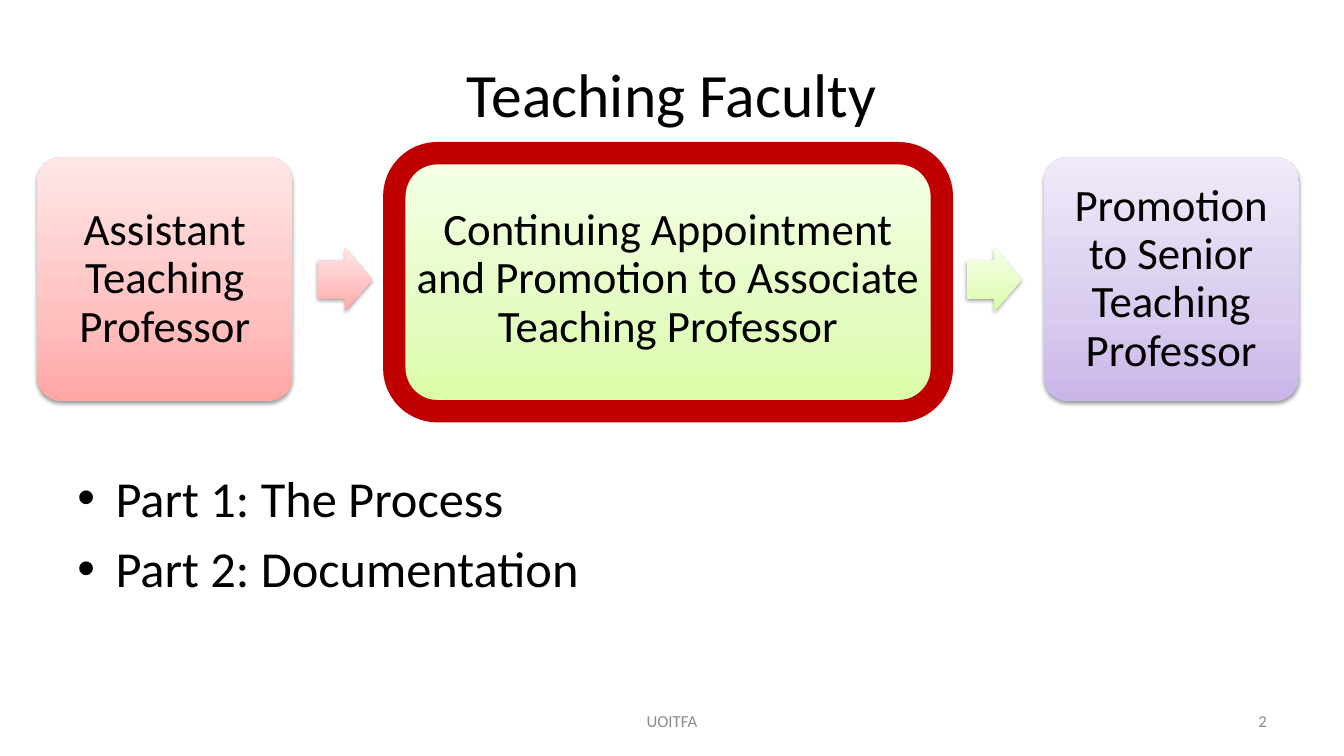
from dataclasses import dataclass

from lxml import etree
from pptx import Presentation, util as u
from pptx.dml.color import RGBColor
from pptx.enum import shapes, text
from pptx.oxml import ns


@dataclass(frozen=True)
class Theme:
    font: str = "Calibri"
    ink: str = "000000"
    muted: str = "8C8C8C"
    accent: str = "C00000"
    red: tuple[str, ...] = ("FFA6A5", "FFC0BF", "FFE7E7")
    green: tuple[str, ...] = ("DAFDA7", "E4FCC2", "F5FFE7")
    purple: tuple[str, ...] = ("C9B5E8", "D8CBEE", "F0EAF9")
    title_size: float = 44
    body_size: float = 36
    stage_size: float = 32
    footer_size: float = 12


@dataclass(frozen=True)
class Area:
    """Left, top, width and height in percent of the slide."""
    left: float
    top: float
    width: float
    height: float

    def place(self) -> tuple[int, int, int, int]:
        return (int(SLIDE_WIDTH * self.left / 100), int(SLIDE_HEIGHT * self.top / 100),
                int(SLIDE_WIDTH * self.width / 100), int(SLIDE_HEIGHT * self.height / 100))


@dataclass(frozen=True)
class Stage:
    label: str
    width: float
    colors: tuple[str, ...]
    highlighted: bool = False


THEME = Theme()
SLIDE_WIDTH, SLIDE_HEIGHT = u.Inches(13.33), u.Inches(7.5)
ALIGN, ANCHOR = text.PP_ALIGN, text.MSO_ANCHOR

# Flow geometry, in percent of the slide
FLOW_LEFT, STAGE_TOP, STAGE_HEIGHT, STAGE_GAP = 2.78, 20.8, 32.27, 7.58
ARROW_OFFSET, ARROW_TOP, ARROW_WIDTH, ARROW_HEIGHT = 1.88, 32.8, 4.05, 8.4
FRAME_TOP, FRAME_HEIGHT = 20.27, 34.13

STAGES = [
    Stage("Assistant Teaching Professor", 18.98, THEME.red),
    Stage("Continuing Appointment and Promotion to Associate Teaching Professor",
          40.74, THEME.green, highlighted=True),
    Stage("Promotion to Senior Teaching Professor", 18.98, THEME.purple),
]
PARTS = ["Part 1: The Process", "Part 2: Documentation"]


def move(box, area: Area) -> None:
    box.left, box.top, box.width, box.height = area.place()


def add_bullet(para, indent: float) -> None:
    properties = para._p.get_or_add_pPr()
    properties.set("marL", str(u.Inches(indent)))
    properties.set("indent", str(-u.Inches(indent)))
    etree.SubElement(properties, ns.qn("a:buFont")).set("typeface", "Arial")
    etree.SubElement(properties, ns.qn("a:buChar")).set("char", "•")


def write(box, *lines: str, size: float, color: str = THEME.ink, align=ALIGN.LEFT,
          anchor=ANCHOR.TOP, line_spacing: float = 1.0, space_before: float = 0,
          bullet_indent: float = 0, side_inset: float = 0.1) -> None:
    frame = box.text_frame
    frame.word_wrap = True
    frame.auto_size = text.MSO_AUTO_SIZE.NONE
    frame.vertical_anchor = anchor
    frame.margin_left = frame.margin_right = u.Inches(side_inset)
    for index, line in enumerate(lines):
        para = frame.add_paragraph() if index else frame.paragraphs[0]
        para.alignment = align
        para.line_spacing = line_spacing
        para.space_before = u.Pt(space_before if index else 0)
        if bullet_indent:
            add_bullet(para, bullet_indent)
        span = para.add_run()
        span.text = line
        span.font.name = THEME.font
        span.font.size = u.Pt(size)
        span.font.color.rgb = RGBColor.from_string(color)


def add_color(parent, color: str):
    node = etree.SubElement(parent, ns.qn("a:srgbClr"))
    node.set("val", color)
    return node


def shade(shape, colors: tuple[str, ...]) -> None:
    """Vertical gradient from the bottom up, with a soft shadow below."""
    shape.fill.gradient()
    shape.fill.gradient_angle = 90
    stops = shape._element.spPr.find(".//" + ns.qn("a:gsLst"))
    for stop in list(stops):
        stops.remove(stop)
    for percent, color in zip((0, 35, 100), colors):
        stop = etree.SubElement(stops, ns.qn("a:gs"))
        stop.set("pos", str(percent * 1000))
        add_color(stop, color)
    shape.line.fill.background()
    shape.shadow.inherit = False
    effects = shape._element.spPr.find(ns.qn("a:effectLst"))
    shadow = etree.SubElement(effects, ns.qn("a:outerShdw"))
    for key, value in {"blurRad": u.Pt(3.1), "dist": u.Pt(1.6), "dir": 90 * 60000}.items():
        shadow.set(key, str(value))
    shadow.set("rotWithShape", "0")
    etree.SubElement(add_color(shadow, "000000"), ns.qn("a:alpha")).set("val", "38000")


def add_stage(page, stage: Stage, left: float) -> None:
    box = page.shapes.add_shape(shapes.MSO_SHAPE.ROUNDED_RECTANGLE,
                                *Area(left, STAGE_TOP, stage.width, STAGE_HEIGHT).place())
    box.adjustments[0] = 0.1
    shade(box, stage.colors)
    write(box, stage.label, size=THEME.stage_size, align=ALIGN.CENTER,
          anchor=ANCHOR.MIDDLE, line_spacing=0.9, side_inset=0.12)


def add_arrow(page, stage: Stage, left: float) -> None:
    arrow = page.shapes.add_shape(shapes.MSO_SHAPE.RIGHT_ARROW,
                                  *Area(left, ARROW_TOP, ARROW_WIDTH, ARROW_HEIGHT).place())
    arrow.adjustments[0] = 0.6
    shade(arrow, stage.colors)


def add_frame(page, stage: Stage, left: float) -> None:
    frame = page.shapes.add_shape(shapes.MSO_SHAPE.ROUNDED_RECTANGLE,
                                  *Area(left, FRAME_TOP, stage.width, FRAME_HEIGHT).place())
    frame.fill.background()
    frame.line.color.rgb = RGBColor.from_string(THEME.accent)
    frame.line.width = u.Pt(16)
    frame.shadow.inherit = False


def add_flow(page) -> None:
    left = FLOW_LEFT
    for stage in STAGES:
        add_stage(page, stage, left)
        if stage.highlighted:
            add_frame(page, stage, left)
        right = left + stage.width
        if stage is not STAGES[-1]:
            add_arrow(page, stage, right + ARROW_OFFSET)
        left = right + STAGE_GAP


def add_footer(page, label: str, area: Area, align) -> None:
    write(page.shapes.add_textbox(*area.place()), label, size=THEME.footer_size,
          color=THEME.muted, align=align, anchor=ANCHOR.MIDDLE)


def main() -> None:
    deck = Presentation()
    deck.slide_width, deck.slide_height = SLIDE_WIDTH, SLIDE_HEIGHT
    page = deck.slides.add_slide(deck.slide_layouts[1])

    # Title and list
    title, body = page.shapes.title, page.placeholders[1]
    move(title, Area(5, 4, 90, 16.67))
    write(title, "Teaching Faculty", size=THEME.title_size, align=ALIGN.CENTER,
          anchor=ANCHOR.MIDDLE)
    move(body, Area(5, 61.07, 90, 28.27))
    write(body, *PARTS, size=THEME.body_size, space_before=7.2, bullet_indent=0.38)

    # Career stages
    add_flow(page)

    # Footer and page number
    add_footer(page, "UOITFA", Area(34.17, 92.67, 31.66, 5.33), ALIGN.CENTER)
    add_footer(page, "2", Area(71.67, 92.67, 23.33, 5.33), ALIGN.RIGHT)

    deck.save("out.pptx")


if __name__ == "__main__":
    main()
